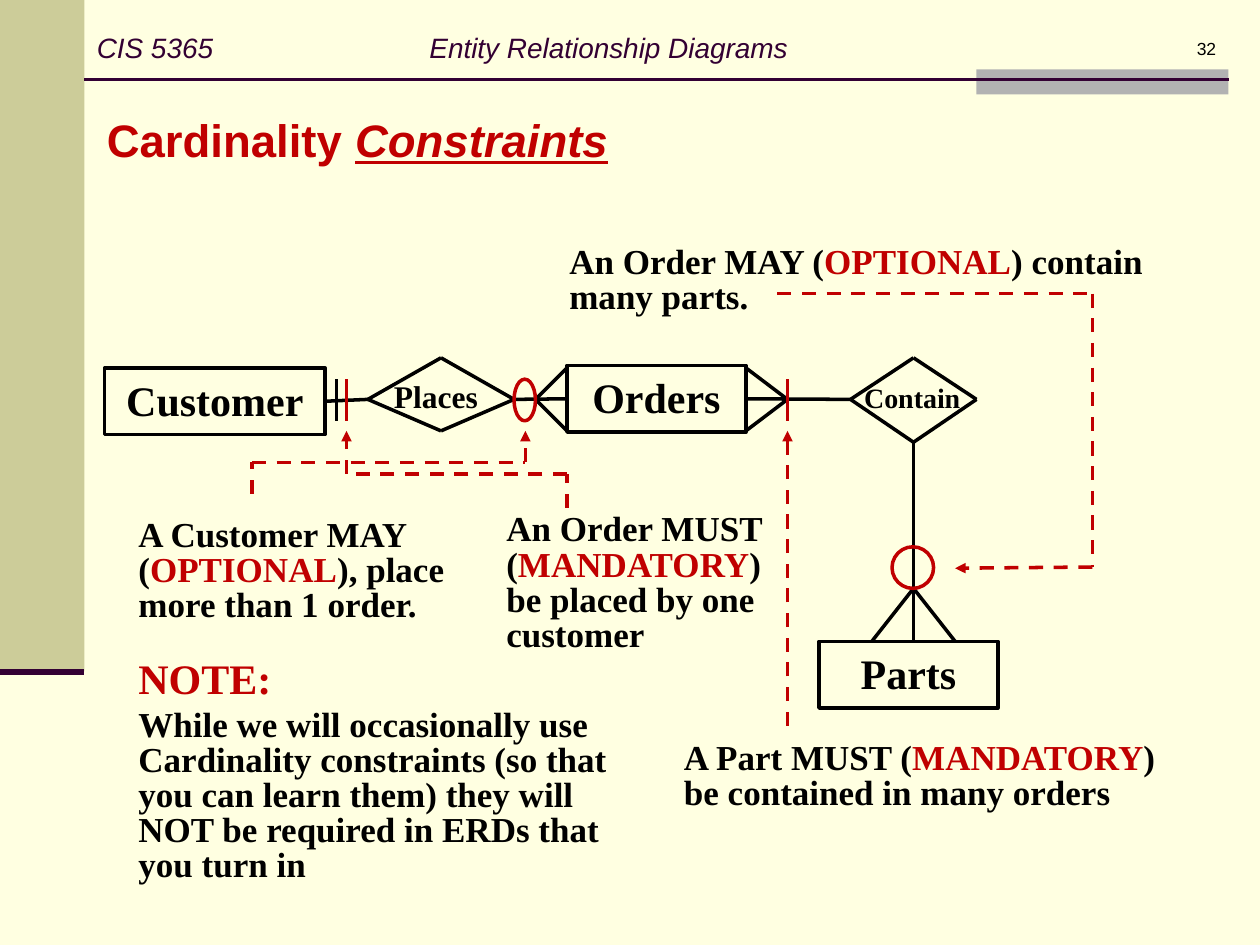
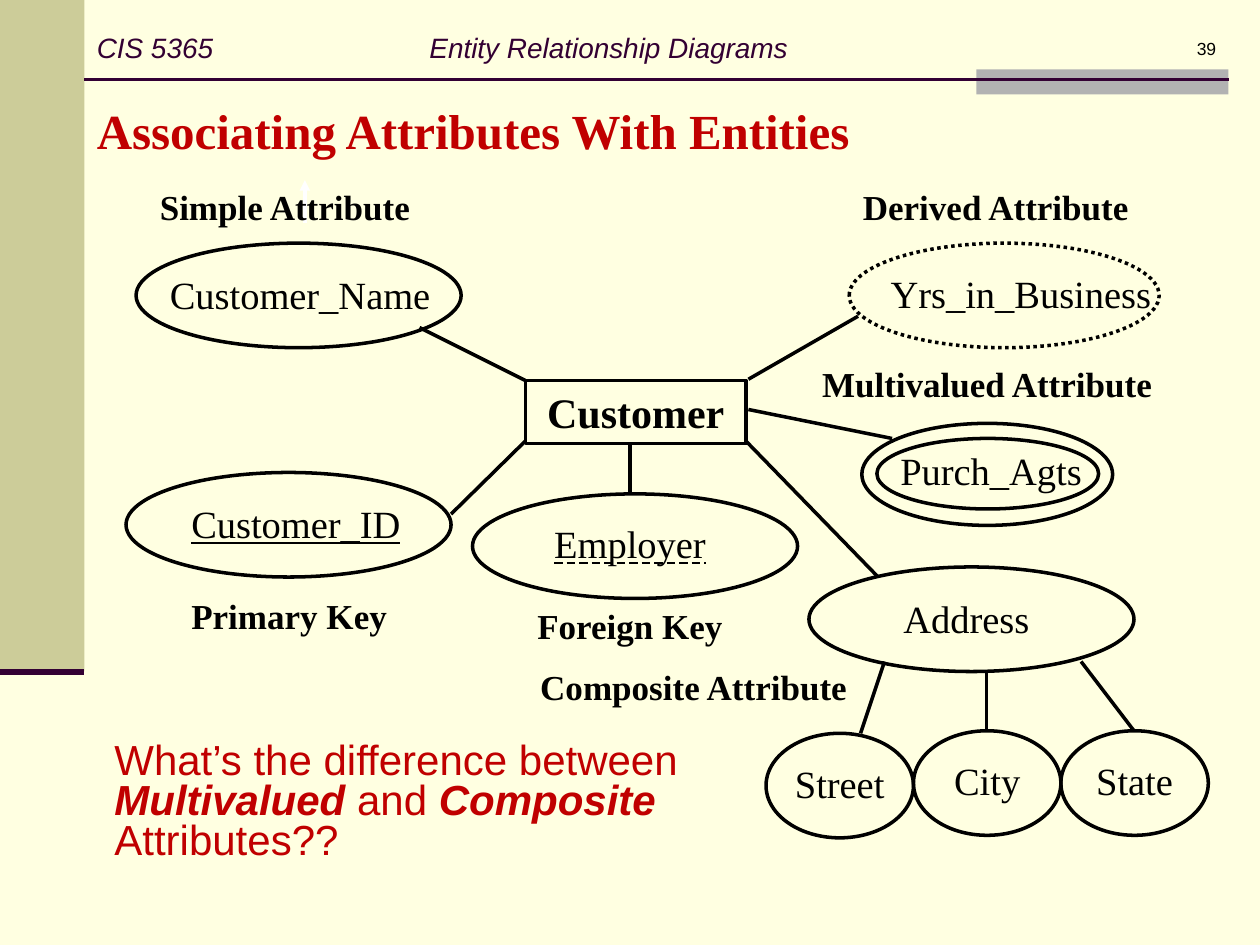
from lxml import etree
from pptx import Presentation
from pptx import util as u
from pptx.dml.color import RGBColor
from pptx.enum import dml, shapes, text
from pptx.oxml.ns import qn

C = {"page": "FFFFE1", "band": "CCCC99", "tab": "B2B2B2", "plum": "330033",
     "red": "C00000", "ink": "000000", "white": "FFFFFF"}
SERIF, SANS = "Times New Roman", "Arial"
RECT, OVAL = shapes.MSO_SHAPE.RECTANGLE, shapes.MSO_SHAPE.OVAL
DASH, DOT = dml.MSO_LINE.DASH, dml.MSO_LINE.ROUND_DOT

HEADER = "CIS 5365\tEntity Relationship Diagrams"
HEADER_TAB = 2.64

BASE = {"size": 20, "font": SERIF, "color": "ink"}
STYLES = {
    "note": {"bold": True},
    "entity": {"size": 24, "bold": True, "align": "CENTER"},
    "relation": {"size": 18, "bold": True, "align": "CENTER"},
    "small relation": {"size": 16, "bold": True, "align": "CENTER"},
    "label": {"bold": True},
    "mid label": {"bold": True, "align": "CENTER"},
    "attribute": {"size": 22},
    "mid attribute": {"size": 22, "align": "CENTER"},
    "primary key": {"size": 22, "underline": True},
    "foreign key": {"size": 22, "underline": text.MSO_UNDERLINE.DASH_LINE, "align": "CENTER"},
    "warning": {"size": 24, "bold": True, "color": "red", "leading": 20},
    "rule": {"bold": True, "leading": 20},
    "question": {"size": 24, "font": SANS, "color": "red", "leading": 23},
    "sans title": {"size": 26, "font": SANS, "color": "red", "bold": True},
    "serif title": {"size": 28, "color": "red", "bold": True},
    "header": {"size": 16, "font": SANS, "color": "plum", "italic": True, "before": False},
    "number": {"size": 10, "font": SANS, "align": "RIGHT", "before": False},
}
EMPHASIS = {
    "rule": {"color": "red"},
    "sans title": {"italic": True, "underline": True},
    "question": {"bold": True, "italic": True},
}

AXIS = 3.17
CONSTRAINTS = {
    "number": "32",
    "entities": {"Customer": (0.83, 2.92, 1.75, 0.53),
                 "Orders": (4.5, 2.9, 1.42, 0.53),
                 "Parts": (6.5, 5.09, 1.42, 0.53)},
    "texts": [
        ("sans title", (0.75, 0.84, 9.33, 0.53), ["Cardinality ", "Constraints"]),
        ("relation", (2.5, 2.94, 1.92, 0.4), ["Places"]),
        ("small relation", (6.28, 2.97, 1.92, 0.37), ["Contain"]),
        ("rule", (1, 4.07, 2.92, 0.94),
         ["A Customer MAY (", "OPTIONAL", "), place more than 1 order."]),
        ("rule", (3.92, 4.03, 2.42, 1.22),
         ["An Order MUST (", "MANDATORY", ") be placed by one customer"]),
        ("rule", (4.42, 1.91, 5.33, 0.66),
         ["An Order MAY (", "OPTIONAL", ") contain many parts."]),
        ("rule", (5.33, 5.84, 4.08, 0.66),
         ["A Part MUST (", "MANDATORY", ") be contained in many orders"]),
        ("warning", (1, 5.25, 2.92, 0.39), ["NOTE:"]),
        ("rule", (1, 5.58, 3.92, 1.5),
         ["While we will occasionally use Cardinality constraints (so that you can "
          "learn them) they will NOT be required in ERDs that you turn in"]),
    ],
    "diamonds": [(2.92, 4.08, 2.84, 3.42), (6.75, 7.75, 2.84, 3.51)],
    "crow feet": [[(4.5, 2.92), (4.25, AXIS), (4.5, 3.42)],
                  [(5.92, 2.92), (6.25, AXIS), (5.92, 3.42)],
                  [(6.92, 5.09), (7.25, 4.67), (7.58, 5.09)],
                  [(7.25, 3.51), (7.25, 5.09)]],
    "links": [((2.92, AXIS), "Customer", 3), ((4.08, AXIS), "Orders", 1),
              ((6.75, AXIS), "Orders", 3)],
    "bars": [(2.67, "ink"), (2.75, "red"), (6.25, "red")],
    "rings": [(4.08, 3.01, 0.17, 0.33), (7.08, 4.34, 0.33, 0.33)],
    "pointers": [[(4.5, 4.03), (4.5, 3.76), (2.75, 3.76), (2.75, 3.42)],
                 [(2, 3.92), (2, 3.67), (4.17, 3.67), (4.17, 3.42)],
                 [(6.17, 2.33), (8.67, 2.33), (8.67, 4.5), (7.58, 4.51)],
                 [(6.25, 5.76), (6.25, 3.42)]],
}

PART_LEFT, PART_WIDTH = 6.08, 1.17
PARTS = [("Street", 5.82), ("City", 5.8), ("State", 5.8)]
OVAL_SIZE = (2.58, 0.83)
ATTRIBUTES = {
    "number": "39",
    "entities": {"Customer": (4.17, 3.02, 1.75, 0.5)},
    "ovals": [(1.08, 1.93, *OVAL_SIZE), (3.75, 3.92, *OVAL_SIZE), (1, 3.75, *OVAL_SIZE),
              (6.42, 4.5, *OVAL_SIZE), (6.96, 3.48, 1.76, 0.56), (6.84, 3.36, 1.99, 0.81)],
    "derived oval": (6.74, 1.93, 2.46, 0.83),
    "pointer": [(2.42, 1.77), (2.42, 1.43)],
    "texts": [
        ("serif title", (0.67, 0.75, 9.33, 0.57), ["Associating Attributes With Entities"]),
        ("label", (1.17, 1.42, 2.5, 0.43), ["Simple Attribute"]),
        ("attribute", (1.25, 2.1, 2.5, 0.47), ["Customer_Name"]),
        ("label", (6.75, 1.42, 2.5, 0.43), ["Derived Attribute"]),
        ("attribute", (6.97, 2.09, 2.38, 0.47), ["Yrs_in_Business"]),
        ("mid label", (6.25, 2.83, 3.17, 0.44), ["Multivalued Attribute"]),
        ("mid attribute", (6.89, 3.5, 1.95, 0.47), ["Purch_Agts"]),
        ("primary key", (1.42, 3.92, 2.5, 0.47), ["Customer_ID"]),
        ("label", (1.42, 4.67, 2.5, 0.43), ["Primary Key"]),
        ("foreign key", (3.75, 4.08, 2.5, 0.47), ["Employer"]),
        ("mid label", (3.75, 4.75, 2.5, 0.43), ["Foreign Key"]),
        ("mid attribute", (6.42, 4.67, 2.5, 0.47), ["Address"]),
        ("mid label", (3.92, 5.23, 3.17, 0.44), ["Composite Attribute"]),
        ("question", (0.81, 5.85, 5.28, 1.07),
         ["What’s the difference between ", "Multivalued", " and ", "Composite",
          " Attributes??"]),
    ],
    "spokes": [[(3.33, 2.6), (4.17, 3.02)], [(5.94, 3.01), (6.81, 2.51)],
               [(5.94, 3.25), (7.08, 3.48)], [(3.58, 4.08), (4.17, 3.5)],
               [(5, 3.92), (5, 3.52)], [(5.92, 3.5), (6.97, 4.58)],
               [(6.83, 5.82), (7.02, 5.25)], [(7.83, 5.8), (7.83, 5.32)],
               [(9, 5.8), (8.58, 5.25)]],
}


def rgb(name):
    return RGBColor.from_string(C[name])


def inches(values):
    return [u.Inches(v) for v in values]


def write(sp, style, parts, anchor=text.MSO_ANCHOR.TOP):
    look = {**BASE, **STYLES[style]}
    tf = sp.text_frame
    tf.word_wrap = True
    tf.vertical_anchor = anchor
    p = tf.paragraphs[0]
    p.alignment = getattr(text.PP_ALIGN, look.get("align", "LEFT"))
    if look.get("before", True):
        before = etree.SubElement(p._p.get_or_add_pPr(), qn("a:spcBef"))
        etree.SubElement(before, qn("a:spcPct"), val="50000")
    if "leading" in look:
        p.line_spacing = u.Pt(look["leading"])
    for i, part in enumerate(parts):
        mark = {**look, **EMPHASIS[style]} if i % 2 else look
        r = p.add_run()
        r.text = part
        r.font.size = u.Pt(mark["size"])
        r.font.name = mark["font"]
        r.font.color.rgb = rgb(mark["color"])
        r.font.bold = mark.get("bold", False)
        r.font.italic = mark.get("italic", False)
        r.font.underline = mark.get("underline", False)
    return p


def add_text(slide, style, box, parts, anchor=text.MSO_ANCHOR.TOP):
    return write(slide.shapes.add_textbox(*inches(box)), style, parts, anchor)


def add_shape(slide, kind, box, fill=None, line=None, dash=None):
    sp = slide.shapes.add_shape(kind, *inches(box))
    sp.shadow.inherit = False
    if fill:
        sp.fill.solid()
        sp.fill.fore_color.rgb = rgb(fill)
    else:
        sp.fill.background()
    if line:
        sp.line.color.rgb = rgb(line)
        sp.line.width = u.Pt(2)
        if dash:
            sp.line.dash_style = dash
    else:
        sp.line.fill.background()
    return sp


def add_line(slide, points, color="ink", width=2, dash=None, arrow=False):
    for start, end in zip(points, points[1:]):
        cx = slide.shapes.add_connector(
            shapes.MSO_CONNECTOR.STRAIGHT, *inches(start + end))
        cx.line.color.rgb = rgb(color)
        cx.line.width = u.Pt(width)
        if dash:
            cx.line.dash_style = dash
        if arrow and end == points[-1]:
            etree.SubElement(cx.line._get_or_add_ln(), qn("a:tailEnd"), type="triangle")
        etree.SubElement(cx._element.spPr, qn("a:effectLst"))
    return cx


def start_slide(prs, content):
    slide = prs.slides.add_slide(prs.slide_layouts[6])
    slide.background.fill.solid()
    slide.background.fill.fore_color.rgb = rgb("page")
    add_shape(slide, RECT, (0, 0, 0.67, 5.33), "band")
    add_shape(slide, RECT, (7.75, 0.55, 2, 0.2), "tab")
    add_line(slide, [(0.67, 0.63), (9.75, 0.63)], "plum", 1.5)
    add_line(slide, [(0, 5.33), (0.67, 5.33)], "plum", 3.5)
    p = add_text(slide, "header", (0.67, -0.25, 9.17, 1.25), [HEADER], text.MSO_ANCHOR.MIDDLE)
    tabs = etree.SubElement(p._p.get_or_add_pPr(), qn("a:tabLst"))
    etree.SubElement(tabs, qn("a:tab"), pos=str(u.Inches(HEADER_TAB)), algn="l")
    add_text(slide, "number", (7.67, 0.25, 2.08, 0.5), [content["number"]])
    entities = {}
    for name, box in content["entities"].items():
        entities[name] = add_shape(slide, RECT, box, line="ink")
        write(entities[name], "entity", [name])
    return slide, entities


def build_constraints(prs):
    slide, entities = start_slide(prs, CONSTRAINTS)
    for item in CONSTRAINTS["texts"]:
        add_text(slide, *item)
    for left, right, top, bottom in CONSTRAINTS["diamonds"]:
        mid = (left + right) / 2
        add_line(slide, [(left, AXIS), (mid, top), (right, AXIS), (mid, bottom), (left, AXIS)])
    for foot in CONSTRAINTS["crow feet"]:
        add_line(slide, foot)
    for start, name, side in CONSTRAINTS["links"]:
        add_line(slide, [start, start]).end_connect(entities[name], side)
    for x, color in CONSTRAINTS["bars"]:
        add_line(slide, [(x, 3.01), (x, 3.34)], color)
    for ring in CONSTRAINTS["rings"]:
        add_shape(slide, OVAL, ring, line="red")
    for pointer in CONSTRAINTS["pointers"]:
        add_line(slide, pointer, "red", dash=DASH, arrow=True)


def build_attributes(prs):
    slide, _ = start_slide(prs, ATTRIBUTES)
    add_line(slide, ATTRIBUTES["pointer"], "white", arrow=True)
    for oval in ATTRIBUTES["ovals"]:
        add_shape(slide, OVAL, oval, line="ink")
    add_shape(slide, OVAL, ATTRIBUTES["derived oval"], line="ink", dash=DOT)
    for i, (name, top) in enumerate(PARTS):
        left = PART_LEFT + i * PART_WIDTH
        add_shape(slide, OVAL, (left, top, PART_WIDTH, 0.83), line="ink")
        add_text(slide, "mid attribute", (left, top + 0.16, PART_WIDTH, 0.47), [name])
    for item in ATTRIBUTES["texts"]:
        add_text(slide, *item)
    for spoke in ATTRIBUTES["spokes"]:
        add_line(slide, spoke)


def main():
    prs = Presentation()
    prs.slide_width, prs.slide_height = u.Inches(10), u.Inches(7.5)
    build_constraints(prs)
    build_attributes(prs)
    prs.save("out.pptx")


if __name__ == "__main__":
    main()
